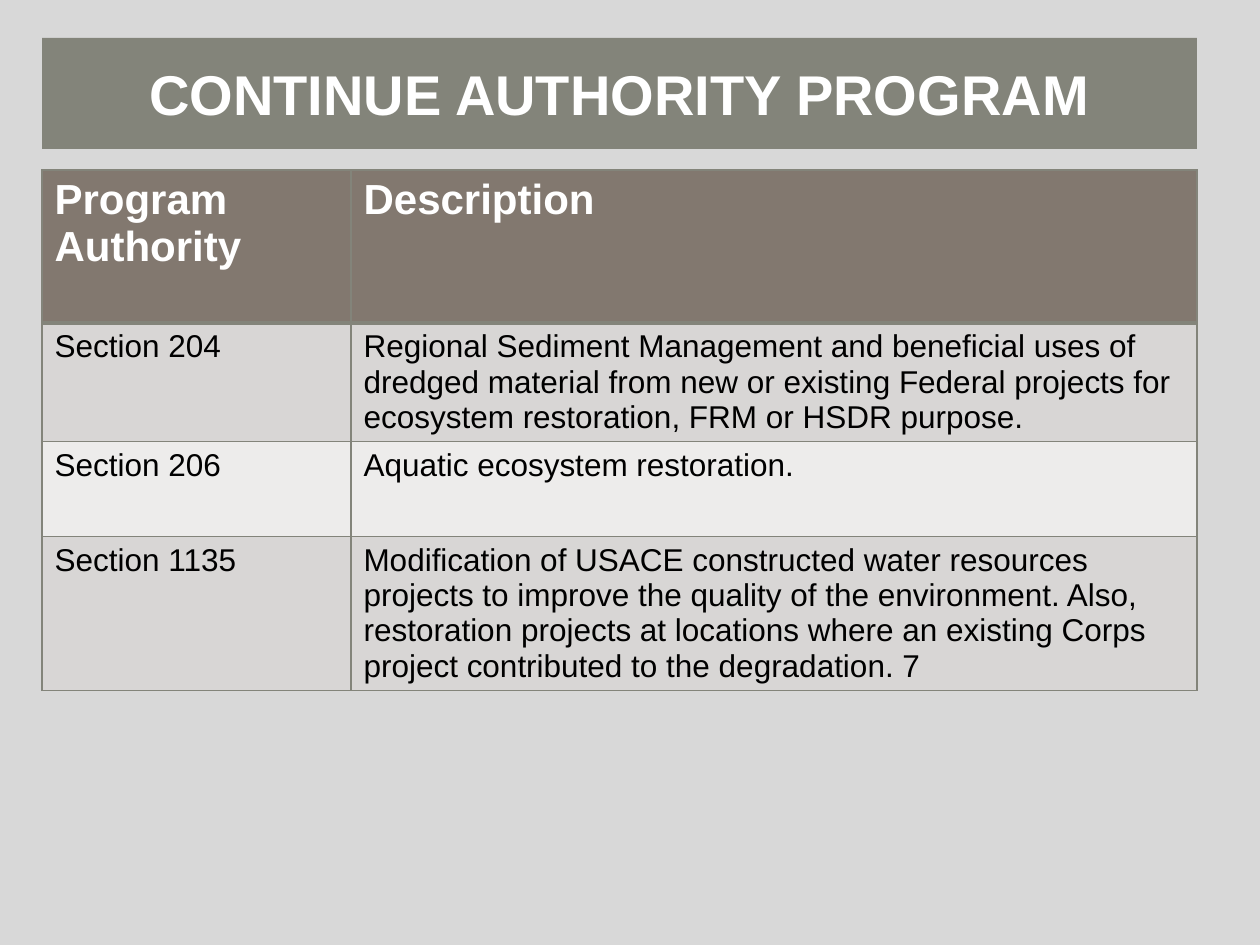
from lxml import etree
from pptx import Presentation
from pptx.dml.color import RGBColor as Rgb
from pptx.enum.text import MSO_ANCHOR as Anchor, PP_ALIGN as Align
from pptx.oxml.ns import qn
from pptx.util import Pt

PX = 914400 // 126
COLORS = {
    "back": "D8D8D8",
    "sage": "83847A",
    "head": "82786F",
    "odd": "D8D6D5",
    "even": "EDECEB",
    "white": "FFFFFF",
    "black": "000000",
}
ROWS = [
    ("Program Authority", "Description"),
    ("Section 204", "Regional Sediment Management and beneficial uses of dredged "
     "material from new or existing Federal projects for ecosystem restoration, "
     "FRM or HSDR purpose."),
    ("Section 206", "Aquatic ecosystem restoration."),
    ("Section 1135", "Modification of USACE constructed water resources projects "
     "to improve the quality of the environment. Also, restoration projects at "
     "locations where an existing Corps project contributed to the degradation. 7"),
]
WIDTHS = [309, 846]
HEIGHTS = [153, 118, 95, 154]
LEFT, WIDE = 42, sum(WIDTHS)


def paint(fill, name):
    fill.solid()
    fill.fore_color.rgb = Rgb.from_string(COLORS[name])


def style(para, size, color, bold):
    font = para.font
    font.name, font.size, font.bold = "Arial", Pt(size), bold
    font.color.rgb = Rgb.from_string(COLORS[color])


deck = Presentation()
deck.slide_width, deck.slide_height = 1260 * PX, 945 * PX
slide = deck.slides.add_slide(deck.slide_layouts[5])
paint(slide.background.fill, "back")

title = slide.shapes.title
title.left, title.top, title.width, title.height = (
    n * PX for n in (LEFT, 38, WIDE, 111))
paint(title.fill, "sage")
frame = title.text_frame
frame.text = "CONTINUE AUTHORITY PROGRAM"
frame.word_wrap = False
frame.vertical_anchor = Anchor.MIDDLE
frame.paragraphs[0].alignment = Align.CENTER
style(frame.paragraphs[0], 32, "white", True)

table = slide.shapes.add_table(
    len(ROWS), len(WIDTHS), LEFT * PX, 170 * PX, WIDE * PX, sum(HEIGHTS) * PX).table
for col, width in zip(table.columns, WIDTHS):
    col.width = width * PX
for r, (texts, height) in enumerate(zip(ROWS, HEIGHTS)):
    table.rows[r].height = height * PX
    for c, text in enumerate(texts):
        cell = table.cell(r, c)
        cell.text = text
        props = cell._tc.get_or_add_tcPr()
        for side in "LRTB":
            thick = (r, side) in ((0, "B"), (1, "T"))
            line = etree.SubElement(props, qn(f"a:ln{side}"), w=str(Pt(3 if thick else 1)))
            fill = etree.SubElement(line, qn("a:solidFill"))
            etree.SubElement(fill, qn("a:srgbClr"), val=COLORS["sage"])
        para = cell.text_frame.paragraphs[0]
        if r == 0:
            paint(cell.fill, "head")
            style(para, 24, "white", True)
        else:
            paint(cell.fill, "odd" if r % 2 else "even")
            style(para, 18, "black", False)

deck.save("out.pptx")
